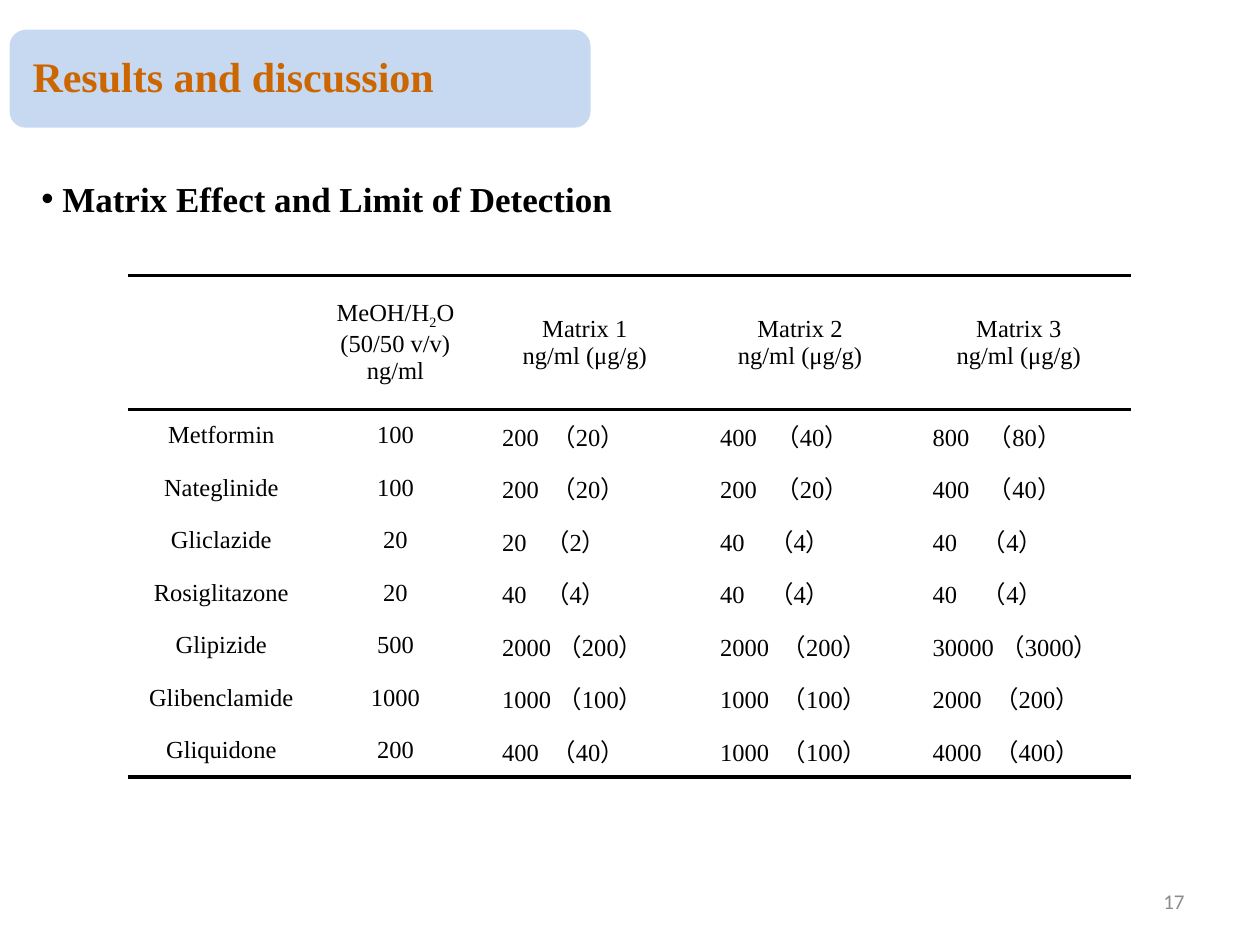
from lxml import etree
from pptx import Presentation
from pptx.dml.color import RGBColor
from pptx.enum.shapes import MSO_SHAPE
from pptx.enum.text import MSO_ANCHOR, PP_ALIGN
from pptx.oxml.ns import qn
from pptx.util import Pt

ROUNDED = MSO_SHAPE.ROUNDED_RECTANGLE
MIDDLE = MSO_ANCHOR.MIDDLE
LEFT, CENTER, RIGHT = PP_ALIGN.LEFT, PP_ALIGN.CENTER, PP_ALIGN.RIGHT
NO_STYLE_NO_GRID = "{2D5ABB26-0587-4C30-8999-92F81FD0307C}"

SERIF, SANS = "Times New Roman", "Calibri"
BLACK, ORANGE, PALE_BLUE, GREY = "000000", "CC6600", "C6D9F1", "8C8C8C"

COLUMN_WIDTHS = [107, 92, 124.5, 121.5, 128.5]
HEADER_HEIGHT, ROW_HEIGHT = 76.5, 30
THICK, THIN = 2.25, 1.5
VALUE_INDENT = 10
SPACE_WIDTH = 3.5
# Digits plus space widths that come before the bracket in each matrix column
LEAD_WIDTHS = [5, 6, 6]

HEADERS = ["", "MeOH/H2O\n(50/50 v/v)\nng/ml"] + [
    f"Matrix {number}\nng/ml (μg/g)" for number in (1, 2, 3)
]
# Drug, limit in solvent, then (ng/ml, μg/g) in each matrix
LIMITS = [
    ("Metformin", 100, (200, 20), (400, 40), (800, 80)),
    ("Nateglinide", 100, (200, 20), (200, 20), (400, 40)),
    ("Gliclazide", 20, (20, 2), (40, 4), (40, 4)),
    ("Rosiglitazone", 20, (40, 4), (40, 4), (40, 4)),
    ("Glipizide", 500, (2000, 200), (2000, 200), (30000, 3000)),
    ("Glibenclamide", 1000, (1000, 100), (1000, 100), (2000, 200)),
    ("Gliquidone", 200, (400, 40), (1000, 100), (4000, 400)),
]


def rgb(color):
    return RGBColor.from_string(color)


class SlideBuilder:
    def __init__(self, slide):
        self.slide = slide

    def format_runs(self, paragraph, size, color=BLACK, font=SERIF, bold=False):
        for run in paragraph.runs:
            run.font.size = Pt(size)
            run.font.name = font
            run.font.bold = bold
            run.font.color.rgb = rgb(color)

    def panel(self, left, top, width, height, color):
        panel = self.slide.shapes.add_shape(
            ROUNDED, Pt(left), Pt(top), Pt(width), Pt(height))
        panel.shadow.inherit = False
        panel.fill.solid()
        panel.fill.fore_color.rgb = rgb(color)
        panel.line.fill.background()

    def text(self, left, top, width, height, wording, size, align=LEFT,
             anchor=None, bullet_gap=None, **style):
        frame = self.slide.shapes.add_textbox(
            Pt(left), Pt(top), Pt(width), Pt(height)).text_frame
        frame.word_wrap = True
        frame.vertical_anchor = anchor
        frame.text = wording
        paragraph = frame.paragraphs[0]
        paragraph.alignment = align
        if bullet_gap:
            properties = paragraph._p.get_or_add_pPr()
            properties.set("marL", str(Pt(bullet_gap)))
            properties.set("indent", str(-Pt(bullet_gap)))
            etree.SubElement(properties, qn("a:buFont"), typeface="Arial")
            etree.SubElement(properties, qn("a:buChar"), char="•")
        self.format_runs(paragraph, size, **style)

    def table(self, left, top, widths, heights):
        frame = self.slide.shapes.add_table(
            len(heights), len(widths), Pt(left), Pt(top),
            Pt(sum(widths)), Pt(sum(heights)))
        table = frame.table
        table.first_row = table.horz_banding = False
        table._tbl.tblPr.find(qn("a:tableStyleId")).text = NO_STYLE_NO_GRID
        for column, width in zip(table.columns, widths):
            column.width = Pt(width)
        for row, height in zip(table.rows, heights):
            row.height = Pt(height)
        return table

    def cell(self, cell, wording, top=None, bottom=None):
        cell.margin_left = cell.margin_right = Pt(5)
        cell.margin_top = cell.margin_bottom = 0
        cell.vertical_anchor = MIDDLE
        for side, width in (("a:lnL", None), ("a:lnR", None),
                            ("a:lnT", top), ("a:lnB", bottom)):
            self.border(cell, side, width)
        cell.fill.background()
        cell.text_frame.text = wording
        for paragraph in cell.text_frame.paragraphs:
            paragraph.alignment = CENTER
            if "H2O" in paragraph.text:
                self.split_run(paragraph, "2", baseline="-25000")
            self.format_runs(paragraph, 14)

    def value_cell(self, cell, volume, mass, lead_width, **borders):
        """Fill a cell with two values, the gap widened to the column's lead."""
        self.cell(cell, f"{volume} （{mass}）", **borders)
        paragraph = cell.text_frame.paragraphs[0]
        paragraph.alignment = LEFT
        paragraph._p.get_or_add_pPr().set("indent", str(Pt(VALUE_INDENT)))
        extra_spaces = lead_width - len(str(volume)) - 1
        if extra_spaces > 0:
            spacing = int(extra_spaces * SPACE_WIDTH * 100)
            self.split_run(paragraph, " ", spc=str(spacing))
            self.format_runs(paragraph, 14)

    def border(self, cell, side, width):
        line = etree.SubElement(cell._tc.get_or_add_tcPr(), qn(side))
        if width:
            line.set("w", str(Pt(width)))
            fill = etree.SubElement(line, qn("a:solidFill"))
            etree.SubElement(fill, qn("a:srgbClr"), val=BLACK)
        else:
            etree.SubElement(line, qn("a:noFill"))

    def split_run(self, paragraph, mark, **attributes):
        """Put the mark in a run of its own that has the given attributes."""
        before, after = paragraph.text.split(mark)
        paragraph.runs[0].text = before
        marked = paragraph.add_run()
        marked.text = mark
        for name, value in attributes.items():
            marked._r.get_or_add_rPr().set(name, value)
        paragraph.add_run().text = after


def main():
    presentation = Presentation()
    presentation.slide_width, presentation.slide_height = Pt(720), Pt(540)
    builder = SlideBuilder(
        presentation.slides.add_slide(presentation.slide_layouts[6]))

    builder.panel(5.5, 17, 332, 56, PALE_BLUE)
    builder.text(11.5, 25.5, 326, 36, "Results and discussion", 24,
                 color=ORANGE, bold=True)

    heights = [HEADER_HEIGHT] + [ROW_HEIGHT] * len(LIMITS)
    table = builder.table(73, 157.5, COLUMN_WIDTHS, heights)
    for column, header in enumerate(HEADERS):
        builder.cell(table.cell(0, column), header, top=THICK, bottom=THIN)
    for row, (drug, solvent, *matrices) in enumerate(LIMITS, start=1):
        borders = {"top": THIN if row == 1 else None,
                   "bottom": THICK if row == len(LIMITS) else None}
        builder.cell(table.cell(row, 0), drug, **borders)
        builder.cell(table.cell(row, 1), str(solvent), **borders)
        for column, ((volume, mass), lead_width) in enumerate(
                zip(matrices, LEAD_WIDTHS), start=2):
            builder.value_cell(table.cell(row, column), volume, mass,
                               lead_width, **borders)

    builder.text(16.5, 98, 350, 32, "Matrix Effect and Limit of Detection", 20,
                 bullet_gap=12, bold=True)
    builder.text(516, 500.5, 168, 29, "17", 12, align=RIGHT, anchor=MIDDLE,
                 color=GREY, font=SANS)
    presentation.save("out.pptx")


if __name__ == "__main__":
    main()
